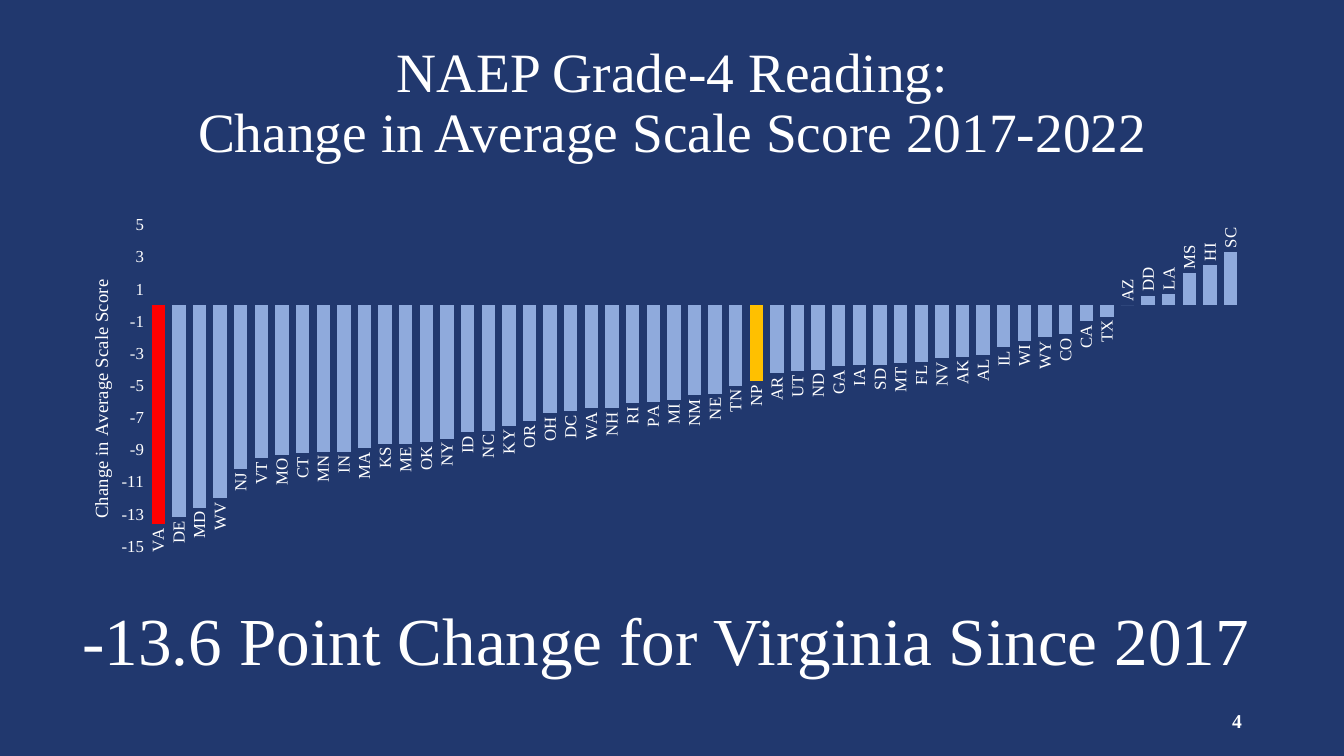
from dataclasses import dataclass
from typing import Any

from pptx import Presentation
from pptx.chart.data import CategoryChartData
from pptx.dml.color import RGBColor
from pptx.enum.chart import XL_CHART_TYPE as ChartType
from pptx.enum.chart import XL_LABEL_POSITION as LabelPos
from pptx.enum.chart import XL_TICK_LABEL_POSITION as TickLabelPos
from pptx.enum.chart import XL_TICK_MARK as TickMark
from pptx.enum.text import MSO_ANCHOR as Anchor
from pptx.enum.text import MSO_AUTO_SIZE as AutoSize
from pptx.enum.text import PP_ALIGN as Align
from pptx.oxml import parse_xml
from pptx.oxml.ns import nsdecls, qn
from pptx.util import Cm, Pt

NAVY = RGBColor(0x21, 0x38, 0x6E)
WHITE = RGBColor(0xFF, 0xFF, 0xFF)
LIGHT_BLUE = RGBColor(0x8F, 0xAA, 0xDC)
RED = RGBColor(0xFF, 0x00, 0x00)
GOLD = RGBColor(0xFF, 0xC0, 0x00)
FONT = "Times New Roman"
UPWARD = "-5400000"

STATES = (
    "VA DE MD WV NJ VT MO CT MN IN MA KS ME OK NY ID NC KY OR OH DC WA NH RI PA MI NM NE "
    "TN NP AR UT ND GA IA SD MT FL NV AK AL IL WI WY CO CA TX AZ DD LA MS HI SC"
).split()
CHANGES = [
    -13.6, -13.2, -12.6, -12, -10.2, -9.5, -9.3, -9.2, -9.1, -9.1, -8.9, -8.6, -8.6, -8.5,
    -8.3, -7.9, -7.8, -7.5, -7.2, -6.7, -6.6, -6.4, -6.4, -6.1, -6, -5.9, -5.6, -5.5,
    -5, -4.7, -4.2, -4.1, -4, -3.8, -3.7, -3.7, -3.6, -3.5, -3.3, -3.2, -3.1, -2.6,
    -2.2, -2, -1.8, -1, -0.7, 0, 0.6, 0.7, 2, 2.5, 3.3,
]
HIGHLIGHTS = {"VA": RED, "NP": GOLD}


@dataclass(frozen=True)
class TextItem:
    text: str
    box: tuple[float, float, float, float]
    size: float
    align: Align = Align.LEFT
    anchor: Anchor = Anchor.TOP
    bold: bool = False
    wrap: bool = True
    line_spacing: float = 1.0


TITLE = TextItem("NAEP Grade-4 Reading:\nChange in Average Scale Score 2017-2022",
                 (2.34, 1.1, 29.21, 3.05), 39.6, Align.CENTER, Anchor.MIDDLE,
                 line_spacing=0.9)
LABELS = [
    TextItem("-13.6 Point Change for Virginia Since 2017", (1.83, 14.94, 30.23, 2.31), 48,
             wrap=False),
    TextItem("4", (23.93, 17.65, 7.62, 1.02), 14, Align.RIGHT, Anchor.MIDDLE, bold=True),
]


def set_all(obj: Any, values: dict[str, Any]) -> None:
    for name, value in values.items():
        setattr(obj, name, value)


def style_font(font: Any, size: float, bold: bool = False) -> None:
    set_all(font, {"name": FONT, "size": Pt(size), "bold": bold})
    font.color.rgb = WHITE


def fill_text(sp: Any, item: TextItem) -> None:
    box = (Cm(v) for v in item.box)
    set_all(sp, dict(zip(("left", "top", "width", "height"), box)))
    tf = sp.text_frame
    tf.text = item.text
    set_all(tf, {"auto_size": AutoSize.NONE, "word_wrap": item.wrap,
                 "vertical_anchor": item.anchor})
    for p in tf.paragraphs:
        set_all(p, {"alignment": item.align, "line_spacing": item.line_spacing})
        for r in p.runs:
            style_font(r.font, item.size, item.bold)


def set_layout(parent: Any, index: int, values: dict[str, Any]) -> None:
    """Give a chart element a manual layout as its child at the index."""
    for old in parent.findall(qn("c:layout")):
        parent.remove(old)
    parts = "".join(f'<c:{tag} val="{value}"/>' for tag, value in values.items())
    parent.insert(index, parse_xml(
        f'<c:layout {nsdecls("c")}><c:manualLayout>{parts}</c:manualLayout></c:layout>'))


def turn_upward(element: Any) -> None:
    body = next(element.iter(qn("a:bodyPr")))
    body.set("rot", UPWARD)
    body.set("vert", "horz")


def style_axes(chart: Any) -> None:
    for axis in (chart.category_axis, chart.value_axis):
        set_all(axis, {"has_major_gridlines": False, "major_tick_mark": TickMark.NONE,
                       "minor_tick_mark": TickMark.NONE})
        axis.format.line.fill.background()
        style_font(axis.tick_labels.font, 12)
    chart.category_axis.tick_label_position = TickLabelPos.NONE

    scores = chart.value_axis
    set_all(scores, {"minimum_scale": -15, "maximum_scale": 5, "major_unit": 2})
    set_all(scores.tick_labels, {"number_format": "0", "number_format_is_linked": False})
    title = scores.axis_title
    title.text_frame.text = "Change in Average Scale Score"
    style_font(title.text_frame.paragraphs[0].runs[0].font, 13.3)
    turn_upward(title._element)
    set_layout(title._element, 1, {"xMode": "edge", "yMode": "edge", "x": 0.001, "y": 0.24})


def style_bars(chart: Any) -> None:
    plot = chart.plots[0]
    set_all(plot, {"gap_width": 54, "overlap": -27, "vary_by_categories": False})
    series = plot.series[0]
    series.invert_if_negative = False
    series.format.fill.solid()
    series.format.fill.fore_color.rgb = LIGHT_BLUE
    for state, color in HIGHLIGHTS.items():
        fill = series.points[STATES.index(state)].format.fill
        fill.solid()
        fill.fore_color.rgb = color
    labels = series.data_labels
    set_all(labels, {"show_category_name": True, "show_value": False,
                     "position": LabelPos.OUTSIDE_END})
    style_font(labels.font, 12)
    turn_upward(labels._element)


def add_score_chart(s: Any) -> None:
    data = CategoryChartData()
    data.categories = STATES
    data.add_series("Series 1", CHANGES)
    chart = s.shapes.add_chart(ChartType.COLUMN_CLUSTERED, Cm(2.13), Cm(4.7),
                               Cm(29.62), Cm(9.42), data).chart
    set_all(chart, {"has_legend": False, "has_title": False})
    style_font(chart.font, 10)
    style_axes(chart)
    style_bars(chart)
    plot_area = next(chart._chartSpace.iter(qn("c:plotArea")))
    set_layout(plot_area, 0, {"layoutTarget": "inner", "xMode": "edge", "yMode": "edge",
                              "x": 0.054, "y": 0.103, "w": 0.93, "h": 0.86})


def main() -> None:
    prs = Presentation()
    set_all(prs, {"slide_width": Cm(33.87), "slide_height": Cm(19.05)})
    s = prs.slides.add_slide(prs.slide_layouts[5])
    s.background.fill.solid()
    s.background.fill.fore_color.rgb = NAVY
    fill_text(s.shapes.title, TITLE)
    add_score_chart(s)
    for item in LABELS:
        fill_text(s.shapes.add_textbox(0, 0, 0, 0), item)
    prs.save("out.pptx")


if __name__ == "__main__":
    main()
